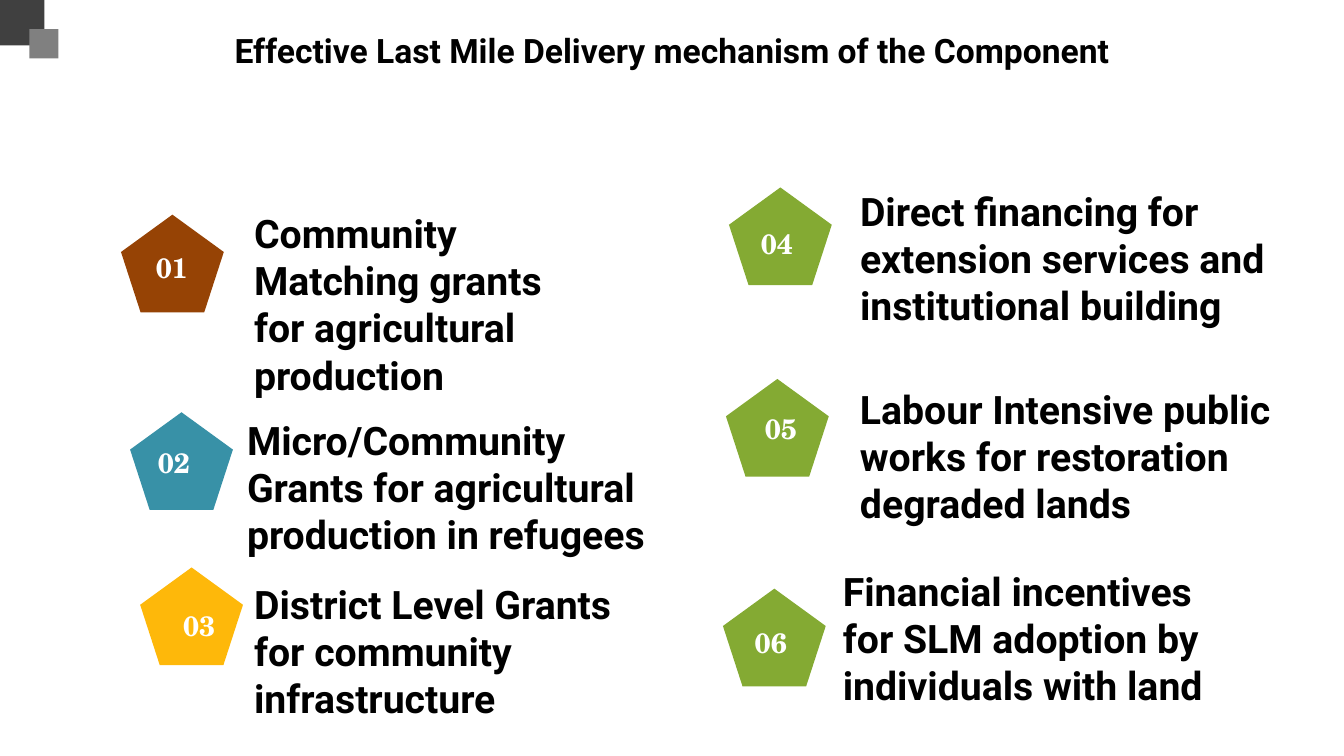
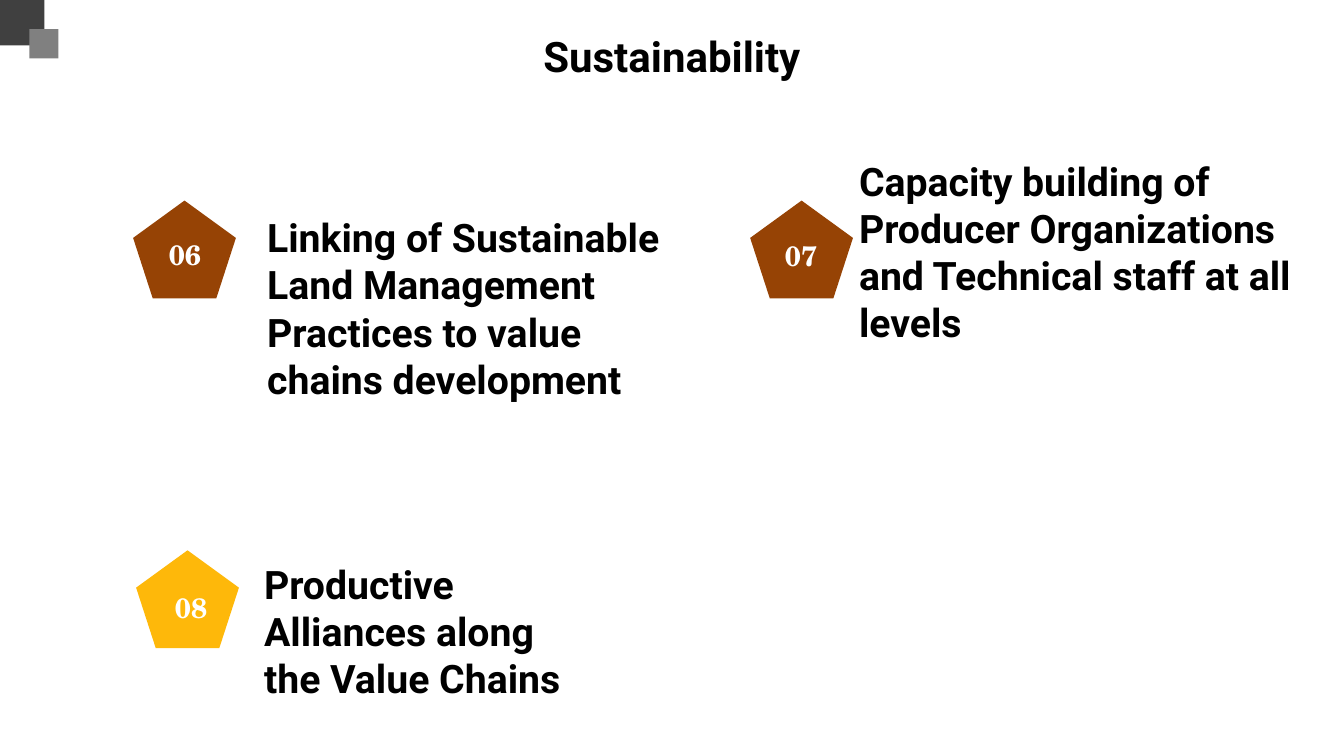
from typing import NamedTuple

from pptx import Presentation
from pptx import util as u
from pptx.dml.color import RGBColor
from pptx.enum import shapes, text

PX = 9144  # 100 px to the inch
SLIDE_WIDTH, SLIDE_HEIGHT = 1333, 750
BADGE_WIDTH, BADGE_HEIGHT = 102, 97
NUMBER_WIDTH, NUMBER_HEIGHT = 95, 44
LINE_HEIGHT = 47

BODY_FONT = "Roboto"
NUMBER_FONT = "TeX Gyre Schola"

BLACK = RGBColor(0x00, 0x00, 0x00)
WHITE = RGBColor(0xFF, 0xFF, 0xFF)
DARK_GREY = RGBColor(0x40, 0x40, 0x40)
MID_GREY = RGBColor(0x80, 0x80, 0x80)
BROWN = RGBColor(0x96, 0x43, 0x05)
TEAL = RGBColor(0x38, 0x91, 0xA7)
AMBER = RGBColor(0xFE, 0xB8, 0x0A)
GREEN = RGBColor(0x84, 0xAA, 0x33)


class Item(NamedTuple):
    """A numbered badge and its wording; each position is (left, top)."""
    number: str
    colour: RGBColor
    badge_at: tuple
    number_at: tuple
    wording: str
    wording_at: tuple
    width: int
    lines: int = 3


DELIVERY = [
    Item("01", BROWN, (120, 213), (123, 244),
         "Community Matching grants for agricultural production",
         (252, 208), 327, 4),
    Item("02", TEAL, (129, 409), (125, 437),
         "Micro/Community Grants for agricultural production in refugees",
         (245, 413), 401),
    Item("03", AMBER, (139, 563), (150, 599),
         "District Level Grants for community infrastructure",
         (252, 576), 361),
    Item("04", GREEN, (723, 186), (723, 220),
         "Direct financing for extension services and institutional building",
         (853, 186), 408),
    Item("05", GREEN, (720, 376), (727, 403),
         "Labour Intensive public works for restoration degraded lands",
         (853, 382), 420),
    Item("06", GREEN, (717, 584), (717, 616),
         "Financial incentives for SLM adoption by individuals with land",
         (836, 563), 378),
]

SUSTAINABILITY = [
    Item("06", BROWN, (132, 199), (136, 231),
         "Linking of Sustainable Land Management Practices to value chains "
         "development",
         (265, 212), 414, 4),
    Item("07", BROWN, (744, 199), (747, 232),
         "Capacity building of Producer Organizations and Technical staff "
         "at all levels",
         (852, 156), 452, 4),
    Item("08", AMBER, (135, 546), (142, 581),
         "Productive Alliances along the Value Chains",
         (262, 556), 327),
]


def scaled(*lengths):
    return [u.Emu(length * PX) for length in lengths]


def add_filled(page, kind, left, top, width, height, colour):
    shape = page.shapes.add_shape(kind, *scaled(left, top, width, height))
    shape.shadow.inherit = False
    shape.fill.solid()
    shape.fill.fore_color.rgb = colour
    shape.line.fill.background()


def add_text(page, wording, left, top, width, height, size,
             font=BODY_FONT, colour=BLACK, centred=True):
    """Add one bold paragraph and return its text frame."""
    box = page.shapes.add_textbox(*scaled(left, top, width, height))
    frame = box.text_frame
    frame.word_wrap = True
    frame.auto_size = text.MSO_AUTO_SIZE.SHAPE_TO_FIT_TEXT
    para = frame.paragraphs[0]
    para.text = wording
    para.alignment = text.PP_ALIGN.CENTER if centred else text.PP_ALIGN.LEFT
    para.font.name = font
    para.font.size = u.Pt(size)
    para.font.bold = True
    para.font.color.rgb = colour
    return frame


def add_item(page, item):
    add_filled(page, shapes.MSO_SHAPE.REGULAR_PENTAGON, *item.badge_at,
               BADGE_WIDTH, BADGE_HEIGHT, item.colour)
    add_text(page, item.number, *item.number_at, NUMBER_WIDTH, NUMBER_HEIGHT,
             20, NUMBER_FONT, WHITE)
    frame = add_text(page, item.wording, *item.wording_at, item.width,
                     item.lines * LINE_HEIGHT, 28, centred=False)
    frame.margin_left = frame.margin_right = 0
    frame.margin_top = frame.margin_bottom = 0
    frame.paragraphs[0].space_before = u.Pt(6)


def add_page(deck, title, title_size, title_height, items):
    page = deck.slides.add_slide(deck.slide_layouts[6])
    add_text(page, title, 0, 25, SLIDE_WIDTH, title_height, title_size)
    rectangle = shapes.MSO_SHAPE.RECTANGLE
    add_filled(page, rectangle, 0, 0, 44, 45, DARK_GREY)
    add_filled(page, rectangle, 29, 29, 29, 29, MID_GREY)
    for item in items:
        add_item(page, item)


def main():
    deck = Presentation()
    deck.slide_width, deck.slide_height = scaled(SLIDE_WIDTH, SLIDE_HEIGHT)
    add_page(deck, "Effective Last Mile Delivery mechanism of the Component",
             24, 50, DELIVERY)
    add_page(deck, "Sustainability", 30, 61, SUSTAINABILITY)
    deck.save("out.pptx")


if __name__ == "__main__":
    main()
